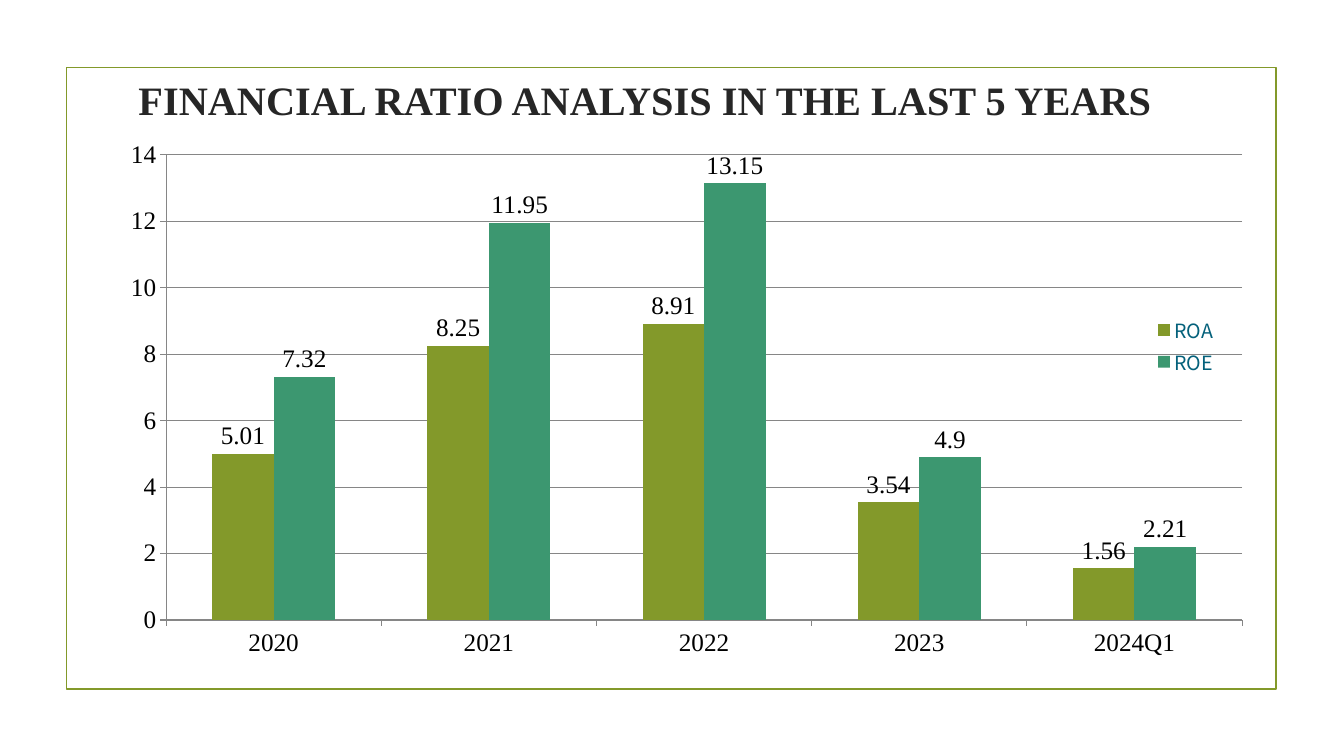
from lxml import etree
from pptx import Presentation
from pptx.chart.data import CategoryChartData
from pptx.dml.color import RGBColor
from pptx.enum.chart import XL_CHART_TYPE, XL_LEGEND_POSITION, XL_LABEL_POSITION, XL_TICK_MARK
from pptx.enum.shapes import MSO_SHAPE
from pptx.enum.text import MSO_ANCHOR, PP_ALIGN
from pptx.oxml.ns import qn
from pptx.util import Pt

COLORS = {"olive": "83992A", "green": "3C9770", "title": "262626",
          "text": "000000", "legend": "04617B", "grid": "868686"}
SERIF = "Times New Roman"
YEARS = ["2020", "2021", "2022", "2023", "2024Q1"]
RATIOS = {"ROA": ([5.01, 8.25, 8.91, 3.54, 1.56], "olive"),
          "ROE": ([7.32, 11.95, 13.15, 4.9, 2.21], "green")}


def color(name):
    return RGBColor.from_string(COLORS[name])


def style_font(font, name, size, color_name):
    font.name, font.size = name, Pt(size)
    font.color.rgb = color(color_name)


def style_line(line, color_name, width):
    line.color.rgb = color(color_name)
    line.width = Pt(width)


def set_layout(element, index, target, chart_size, box):
    """Place a chart part at box (left, top, width, height), in points within the chart."""
    for old in element.findall(qn("c:layout")):
        element.remove(old)
    layout = etree.Element(qn("c:layout"))
    manual = etree.SubElement(layout, qn("c:manualLayout"))
    settings = [("layoutTarget", target)] if target else []
    settings += [("xMode", "edge"), ("yMode", "edge")]
    settings += [(key, f"{length / chart_size[i % 2]:.4f}")
                 for i, (key, length) in enumerate(zip("xywh", box))]
    for tag, value in settings:
        etree.SubElement(manual, qn(f"c:{tag}")).set("val", value)
    element.insert(index, layout)


def add_frame(slide, left, top, width, height):
    frame = slide.shapes.add_shape(MSO_SHAPE.RECTANGLE, Pt(left), Pt(top), Pt(width), Pt(height))
    frame.shadow.inherit = False
    frame.fill.background()
    style_line(frame.line, "olive", 1.25)


def add_title(slide, left, top, width, height):
    box = slide.shapes.add_textbox(Pt(left), Pt(top), Pt(width), Pt(height))
    frame = box.text_frame
    frame.word_wrap = True
    frame.vertical_anchor = MSO_ANCHOR.MIDDLE
    frame.text = "FINANCIAL RATIO ANALYSIS IN THE LAST 5 YEARS"
    para = frame.paragraphs[0]
    para.alignment = PP_ALIGN.CENTER
    span = para.runs[0]
    style_font(span.font, SERIF, 28.8, "title")
    span.font.bold = True


def add_ratio_chart(slide, left, top, width, height):
    data = CategoryChartData()
    data.categories = YEARS
    for name, (values, _) in RATIOS.items():
        data.add_series(name, values)
    chart = slide.shapes.add_chart(XL_CHART_TYPE.COLUMN_CLUSTERED, Pt(left), Pt(top),
                                   Pt(width), Pt(height), data).chart
    chart.has_title = False
    style_font(chart.font, SERIF, 18, "text")

    plot = chart.plots[0]
    plot.gap_width, plot.overlap = 150, 0
    plot.vary_by_categories = False
    for series, (_, fill) in zip(plot.series, RATIOS.values()):
        series.format.fill.solid()
        series.format.fill.fore_color.rgb = color(fill)
        labels = series.data_labels
        labels.show_value = True
        labels.position = XL_LABEL_POSITION.OUTSIDE_END
        style_font(labels.font, SERIF, 18, "text")

    for axis in (chart.category_axis, chart.value_axis):
        axis.major_tick_mark = XL_TICK_MARK.OUTSIDE
        axis.minor_tick_mark = XL_TICK_MARK.NONE
        style_line(axis.format.line, "grid", 0.75)
        style_font(axis.tick_labels.font, SERIF, 18, "text")
    scale = chart.value_axis
    scale.minimum_scale, scale.maximum_scale, scale.major_unit = 0, 14, 2
    scale.has_major_gridlines = True
    style_line(scale.major_gridlines.format.line, "grid", 0.75)

    chart.has_legend = True
    legend = chart.legend
    legend.position = XL_LEGEND_POSITION.RIGHT
    legend.include_in_layout = False
    style_font(legend.font, "Noto Sans CJK SC", 14, "legend")

    size = (width, height)
    plot_area = chart.element.find(".//" + qn("c:plotArea"))
    legend_area = chart.element.find(".//" + qn("c:legend"))
    set_layout(plot_area, 0, "inner", size, (42.3, 17.1, 768.6, 332.2))
    set_layout(legend_area, 1, None, size, (745, 129.5, 52, 48))


def main():
    deck = Presentation()
    deck.slide_width, deck.slide_height = Pt(960), Pt(540)
    page = deck.slides.add_slide(deck.slide_layouts[6])
    add_frame(page, 47.5, 48.2, 864, 444.2)
    add_title(page, 0, 49, 921.6, 44)
    add_ratio_chart(page, 76.3, 93.6, 883.7, 383.8)
    deck.save("out.pptx")


if __name__ == "__main__":
    main()
